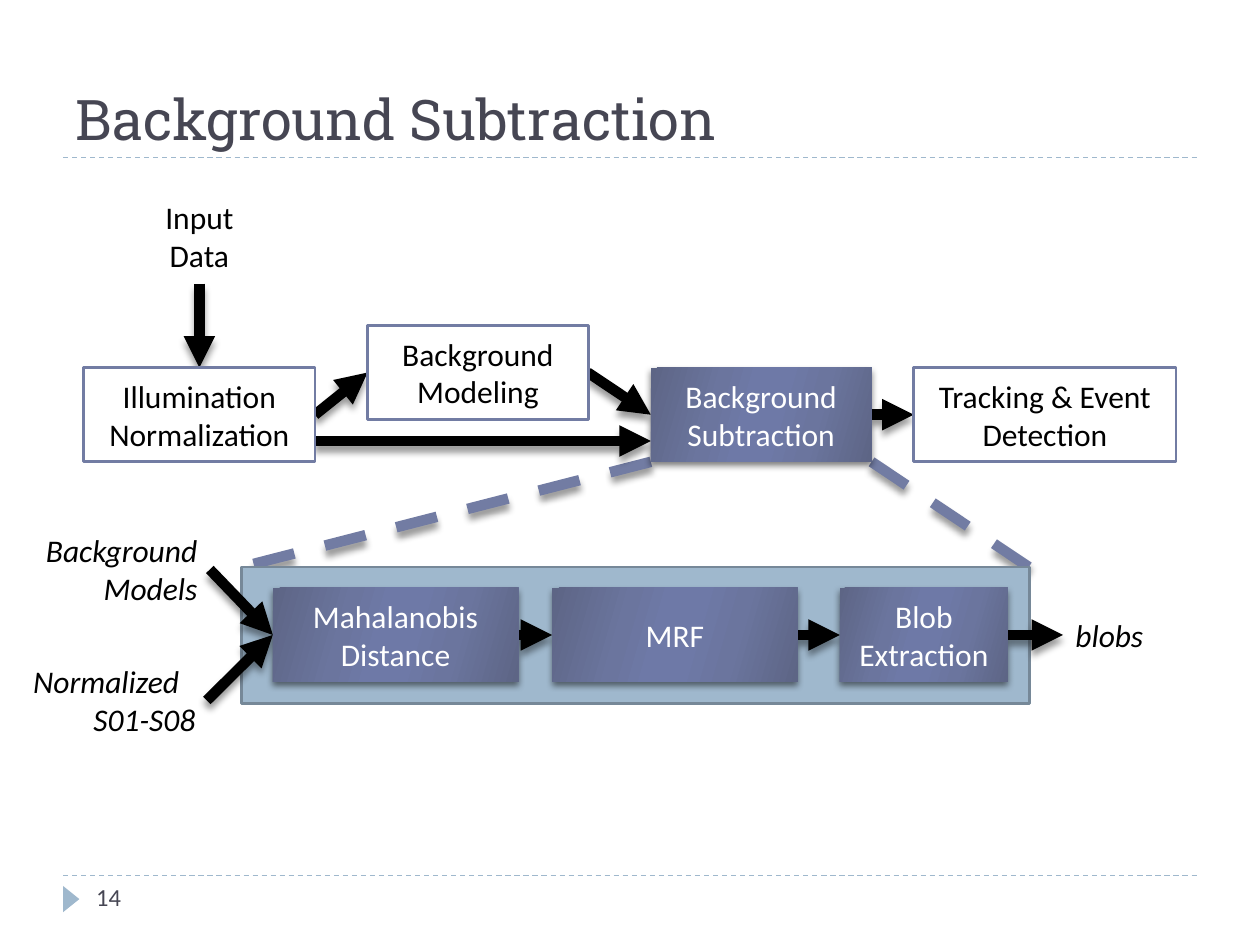
"""Build the slide on the background subtraction pipeline."""
from lxml.etree import SubElement
from pptx import Presentation
from pptx.dml.color import RGBColor
from pptx.enum.dml import MSO_LINE
from pptx.enum.shapes import MSO_CONNECTOR, MSO_SHAPE
from pptx.enum.text import MSO_ANCHOR, PP_ALIGN
from pptx.oxml.ns import qn
from pptx.util import Cm, Pt

BLACK = RGBColor(0x00, 0x00, 0x00)
WHITE = RGBColor(0xFF, 0xFF, 0xFF)
SLATE = RGBColor(0x46, 0x46, 0x53)
BLUE = RGBColor(0x72, 0x7C, 0xA3)
SKY = RGBColor(0x9F, 0xB8, 0xCD)
STEEL = RGBColor(0x76, 0x88, 0x98)
DARK = RGBColor(0x5D, 0x65, 0x85)
MID = RGBColor(0x6B, 0x75, 0x9E)
LIGHT = RGBColor(0x6E, 0x79, 0xA7)
STOPS = [(0, DARK), (30, MID), (45, LIGHT), (55, LIGHT), (73, MID), (100, DARK)]

TALL = 1.9
TOP, LOW = 7.41, 11.85
HIGH = 6.56
PLAIN = [
    (18.42, TOP, 5.29, ["Tracking & Event Detection"]),
    (7.41, HIGH, 4.45, ["Background", "Modeling"]),
    (1.69, TOP, 4.66, ["Illumination", "Normalization"]),
]
SHADED = [
    (13.12, TOP, 4.45, ["Background Subtraction"]),
    (5.5, LOW, 4.95, ["Mahalanobis Distance"]),
    (11.13, LOW, 4.95, ["MRF"]),
    (16.93, LOW, 3.39, ["Blob Extraction"]),
]
ARROWS = [
    (4.02, 5.72, 4.02, TOP),
    (6.35, 8.36, 7.41, 7.51),
    (11.85, 7.51, 13.12, 8.36),
    (17.57, 8.36, 18.42, 8.36),
    (6.35, 8.89, 13.12, 8.89),
    (4.23, 11.48, 5.5, 12.8),
    (4.17, 14.12, 5.5, 12.8),
    (10.45, 12.8, 11.13, 12.8),
    (16.08, 12.8, 16.93, 12.8),
    (20.32, 12.8, 21.43, 12.8),
]


def put(item, **vals):
    """Set each named value on the item."""
    for name, val in vals.items():
        setattr(item, name, val)


def tint(node, color):
    """Add a solid colour child and return it."""
    return SubElement(node, qn("a:srgbClr"), val=str(color))


def shade(effects, alpha, dist):
    """Add a soft shadow that falls straight down."""
    node = SubElement(effects, qn("a:outerShdw"), blurRad=str(Pt(4)),
                      dist=str(Pt(dist)), dir="5400000", rotWithShape="0")
    SubElement(tint(node, BLACK), qn("a:alpha"), val=str(alpha * 1000))


class Deck:
    """Hold the style and the current slide."""

    font = "Calibri"
    size = 18

    def __init__(self):
        """Open a slide that has a title only."""
        self.file = Presentation()
        put(self.file, slide_width=Cm(25.4), slide_height=Cm(19.05))
        self.slide = self.file.slides.add_slide(self.file.slide_layouts[5])
        self.shapes = self.slide.shapes

    def words(self, shape, lines, align, anchor=MSO_ANCHOR.MIDDLE, **look):
        """Fill the shape with one paragraph per line."""
        frame = shape.text_frame
        put(frame, text="\n".join(lines), word_wrap=True, vertical_anchor=anchor)
        color = look.pop("color", BLACK)
        style = {"name": self.font, "size": Pt(self.size), **look}
        for para in frame.paragraphs:
            para.alignment = align
            for run in para.runs:
                put(run.font, **style)
                run.font.color.rgb = color

    def title(self, text):
        """Place and format the title."""
        shape = self.shapes.title
        put(shape, left=Cm(1.27), top=Cm(0.43), width=Cm(22.86), height=Cm(2.75))
        self.words(shape, [text], PP_ALIGN.LEFT, MSO_ANCHOR.BOTTOM,
                   name="Roboto Slab", size=Pt(32), color=SLATE)

    def form(self, area, fill, edge=None, kind=MSO_SHAPE.RECTANGLE):
        """Draw a flat preset shape."""
        shape = self.shapes.add_shape(kind, *map(Cm, area))
        shape.shadow.inherit = False
        shape.fill.solid()
        shape.fill.fore_color.rgb = fill
        if edge is None:
            shape.line.fill.background()
        else:
            shape.line.color.rgb = edge
            shape.line.width = Pt(1.5)
        return shape

    def box(self, left, top, width, lines):
        """Draw an outlined step."""
        shape = self.form((left, top, width, TALL), WHITE, BLUE)
        self.words(shape, lines, PP_ALIGN.CENTER)

    def block(self, left, top, width, lines):
        """Draw a step with a colour blend and a shadow."""
        shape = self.form((left, top, width, TALL), LIGHT)
        shape.fill.gradient()
        shape.fill.gradient_angle = 344
        props = shape._element.spPr
        stops = props.find(".//" + qn("a:gsLst"))
        stops.clear()
        for pos, color in STOPS:
            tint(SubElement(stops, qn("a:gs"), pos=str(pos * 1000)), color)
        shade(props.find(qn("a:effectLst")), 50, 2)
        self.words(shape, lines, PP_ALIGN.CENTER, color=WHITE)

    def line(self, ends, color, width=6, dash=None, head=False, deep=True):
        """Draw a line, with a dash, arrowhead or shadow if asked."""
        link = self.shapes.add_connector(MSO_CONNECTOR.STRAIGHT, *map(Cm, ends))
        link.line.color.rgb = color
        put(link.line, width=Pt(width), dash_style=dash)
        props = link._element.spPr
        if head:
            SubElement(props.find(qn("a:ln")), qn("a:tailEnd"), type="triangle")
        effects = SubElement(props, qn("a:effectLst"))
        if deep:
            shade(effects, 40, 3.4)

    def label(self, area, lines, align, anchor=MSO_ANCHOR.MIDDLE, **look):
        """Add free text."""
        shape = self.shapes.add_textbox(*map(Cm, area))
        self.words(shape, lines, align, anchor, **look)
        return shape


def main():
    """Lay out the slide and save it."""
    deck = Deck()
    for y in (17.65, 3.18):
        deck.line((1.27, y, 24.13, y), SKY, 0.75, MSO_LINE.DASH, deep=False)
    mark = deck.form((1.17, 17.96, 0.53, 0.33), SKY, kind=MSO_SHAPE.ISOSCELES_TRIANGLE)
    mark.rotation = 90
    deck.title("Background Subtraction")
    deck.label((1.69, 17.65, 5.5, 1.02), ["14"], PP_ALIGN.LEFT, MSO_ANCHOR.TOP,
               size=Pt(14), color=SLATE)

    for start, end in ((13.12, 4.87), (17.57, 20.74)):
        deck.line((start, 9.31, end, 11.43), BLUE, dash=MSO_LINE.DASH)
    deck.form((4.87, 11.43, 15.88, 2.75), SKY, STEEL)
    for ends in ARROWS:
        deck.line(ends, BLACK, head=True)
    for step in PLAIN:
        deck.box(*step)
    for step in SHADED:
        deck.block(*step)

    deck.label((2.54, 3.81, 2.96, TALL), ["Input Data"], PP_ALIGN.CENTER)
    deck.label((21.43, LOW, 2.92, TALL), ["blobs"], PP_ALIGN.LEFT, italic=True)
    deck.label((0, 10.58, 4.23, 1.8), ["Background Models"], PP_ALIGN.RIGHT,
               MSO_ANCHOR.TOP, italic=True)
    norm = deck.label((0.42, 13.23, 3.77, 1.8), ["Normalized", "S01-S08"],
                      PP_ALIGN.RIGHT, MSO_ANCHOR.TOP, italic=True)
    norm.text_frame.paragraphs[0].alignment = PP_ALIGN.LEFT
    deck.file.save("out.pptx")


if __name__ == "__main__":
    main()
